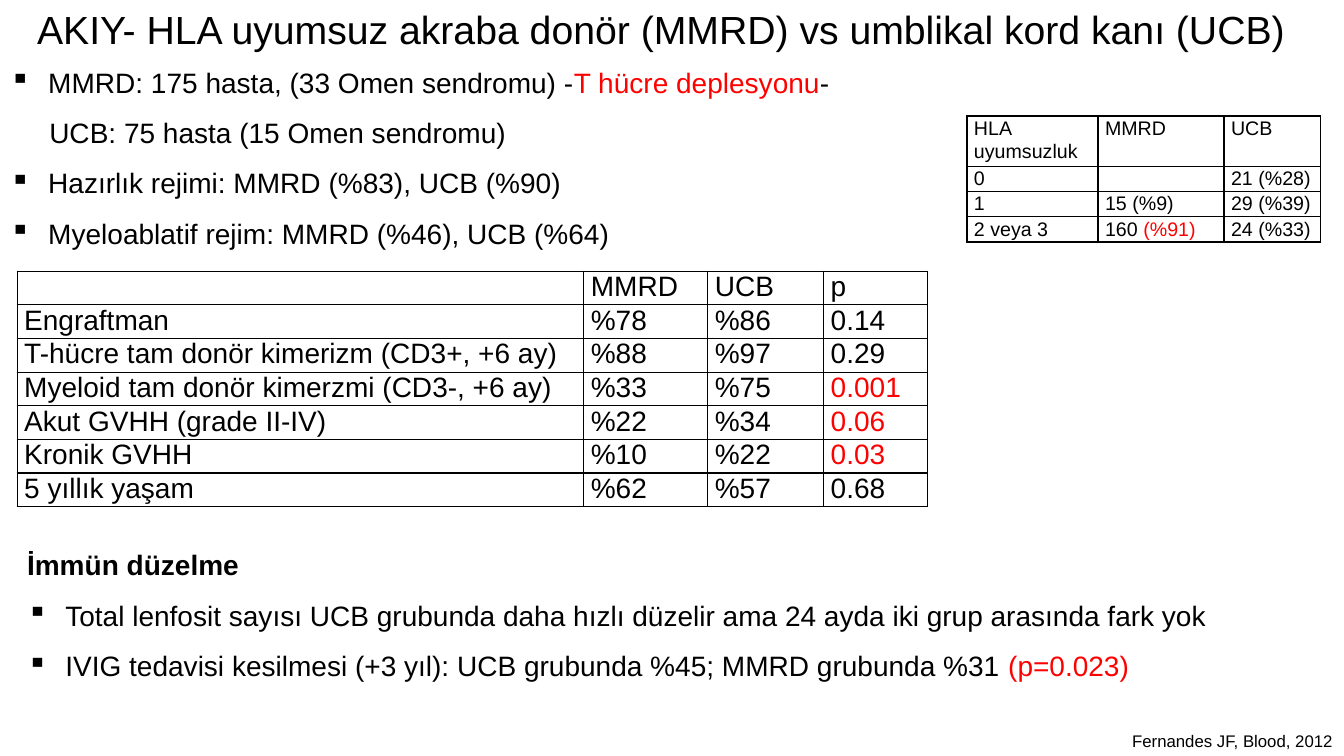
"""Build a slide comparing MMRD and UCB transplant outcomes."""
from dataclasses import dataclass

from lxml.etree import SubElement
from pptx import Presentation
from pptx.dml.color import RGBColor
from pptx.enum.text import MSO_ANCHOR, PP_ALIGN as Align
from pptx.oxml.ns import qn
from pptx.slide import Slide
from pptx.table import _Cell as Cell
from pptx.util import Inches, Pt

COLORS = {"ink": "000000", "accent": "FF0000"}
FONT = "Arial"
HANGING = 0.38


@dataclass(frozen=True)
class Span:
    text: str
    color: str = "ink"


@dataclass(frozen=True)
class Line:
    spans: tuple[Span, ...]
    bullet: bool = False
    indent: float = 0
    bold: bool = False


@dataclass(frozen=True)
class TextBlock:
    box: tuple[float, float, float, float]
    lines: tuple[Line, ...]
    size: int = 20
    spacing: float = 1.0
    align: Align = Align.LEFT
    wrap: bool = True


@dataclass(frozen=True)
class Grid:
    left: float
    top: float
    columns: tuple[float, ...]
    heights: tuple[float, ...]
    rows: tuple[tuple[Line, ...], ...]
    size: int
    spacing: float = 1.0


def plain(text: str, color: str = "ink", **options) -> Line:
    return Line((Span(text, color),), **options)


def red(text: str) -> Line:
    return plain(text, "accent")


def row(*entries: str | Line) -> tuple[Line, ...]:
    return tuple(plain(entry) if isinstance(entry, str) else entry for entry in entries)


def write_line(paragraph, line: Line, size: int, spacing: float) -> None:
    paragraph.line_spacing = spacing
    font = paragraph.font
    font.name, font.size, font.bold = FONT, Pt(size), line.bold
    colors = {span.color for span in line.spans}
    if len(colors) == 1:
        font.color.rgb = RGBColor.from_string(COLORS[colors.pop()])
    for span in line.spans:
        if span.text:
            run = paragraph.add_run()
            run.text = span.text
            if len({part.color for part in line.spans}) > 1:
                run.font.color.rgb = RGBColor.from_string(COLORS[span.color])
    if not paragraph.runs:
        SubElement(paragraph._p, qn("a:endParaRPr"), sz=str(size * 100))
    properties = paragraph._p.get_or_add_pPr()
    if line.indent:
        properties.set("marL", str(Inches(line.indent)))
    if line.bullet:
        properties.set("marL", str(Inches(HANGING)))
        properties.set("indent", str(-Inches(HANGING)))
        marker = SubElement(properties, qn("a:buChar"), char="▪")
        properties.find(qn("a:defRPr")).addprevious(marker)


def draw_text(slide: Slide, block: TextBlock) -> None:
    frame = slide.shapes.add_textbox(*map(Inches, block.box)).text_frame
    frame.word_wrap = block.wrap
    for index, line in enumerate(block.lines):
        paragraph = frame.add_paragraph() if index else frame.paragraphs[0]
        paragraph.alignment = block.align
        write_line(paragraph, line, block.size, block.spacing)


def style_cell(cell: Cell) -> None:
    cell.margin_left = cell.margin_right = Inches(0.07)
    cell.margin_top = cell.margin_bottom = 0
    cell.vertical_anchor = MSO_ANCHOR.TOP
    properties = cell._tc.get_or_add_tcPr()
    for side in ("lnL", "lnR", "lnT", "lnB"):
        border = SubElement(properties, qn(f"a:{side}"), w=str(Pt(1)))
        fill = SubElement(border, qn("a:solidFill"))
        SubElement(fill, qn("a:srgbClr"), val=COLORS["ink"])
    cell.fill.background()


def draw_grid(slide: Slide, grid: Grid) -> None:
    table = slide.shapes.add_table(
        len(grid.rows), len(grid.columns), Inches(grid.left), Inches(grid.top),
        Inches(sum(grid.columns)), Inches(sum(grid.heights)),
    ).table
    table.first_row = table.horz_banding = False
    for column, width in zip(table.columns, grid.columns):
        column.width = Inches(width)
    for table_row, height, entries in zip(table.rows, grid.heights, grid.rows):
        table_row.height = Inches(height)
        for cell, entry in zip(table_row.cells, entries):
            style_cell(cell)
            write_line(cell.text_frame.paragraphs[0], entry, grid.size, grid.spacing)


COHORTS = TextBlock((0, 0.43, 13.45, 2.12), (
    Line((Span("MMRD: 175 hasta, (33 Omen sendromu) -"),
          Span("T hücre deplesyonu", "accent"), Span("-")), bullet=True),
    plain("UCB: 75 hasta (15 Omen sendromu)", indent=0.39),
    plain("Hazırlık rejimi: MMRD (%83), UCB (%90)", bullet=True),
    plain("Myeloablatif rejim: MMRD (%46), UCB (%64)", bullet=True),
), spacing=1.5)

TITLE = TextBlock((0.17, 0, 12.77, 0.57), (
    plain("AKIY- HLA uyumsuz akraba donör (MMRD) vs umblikal kord kanı (UCB)"),
), size=28, align=Align.CENTER)

RECOVERY = TextBlock((0.17, 5.22, 13.7, 1.62), (
    plain("İmmün düzelme", bold=True),
    plain("Total lenfosit sayısı UCB grubunda daha hızlı düzelir ama 24 ayda iki grup "
          "arasında fark yok", bullet=True),
    Line((Span("IVIG tedavisi kesilmesi (+3 yıl): UCB grubunda %45; MMRD grubunda %31 "),
          Span("(p=0.023)", "accent")), bullet=True),
), spacing=1.5)

CITATION = TextBlock((11.13, 7.2, 2.21, 0.3), (plain("Fernandes JF, Blood, 2012"),),
                     size=12, wrap=False)

OUTCOMES = Grid(0.17, 2.69, (5.62, 1.23, 1.15, 1.03), (0.33,) * 7, (
    row("", "MMRD", "UCB", "p"),
    row("Engraftman", "%78", "%86", "0.14"),
    row("T-hücre tam donör kimerizm (CD3+, +6 ay)", "%88", "%97", "0.29"),
    row("Myeloid tam donör kimerzmi (CD3-, +6 ay)", "%33", "%75", red("0.001")),
    row("Akut GVHH (grade II-IV)", "%22", "%34", red("0.06")),
    row("Kronik GVHH", "%10", "%22", red("0.03")),
    row("5 yıllık yaşam", "%62", "%57", "0.68"),
), size=20)

MISMATCH = Grid(9.59, 1.15, (1.3, 1.25, 0.96), (0.5, 0.25, 0.25, 0.25), (
    row("HLA uyumsuzluk", "MMRD", "UCB"),
    row("0", "", "21 (%28)"),
    row("1", "15 (%9)", "29 (%39)"),
    row("2 veya 3", Line((Span("160 "), Span("(%91)", "accent"))), "24 (%33)"),
), size=14, spacing=1.07)


def main() -> None:
    deck = Presentation()
    deck.slide_width, deck.slide_height = Inches(13.33), Inches(7.5)
    slide = deck.slides.add_slide(deck.slide_layouts[6])
    for block in (COHORTS, TITLE):
        draw_text(slide, block)
    draw_grid(slide, OUTCOMES)
    for block in (RECOVERY, CITATION):
        draw_text(slide, block)
    draw_grid(slide, MISMATCH)
    deck.save("out.pptx")


if __name__ == "__main__":
    main()
